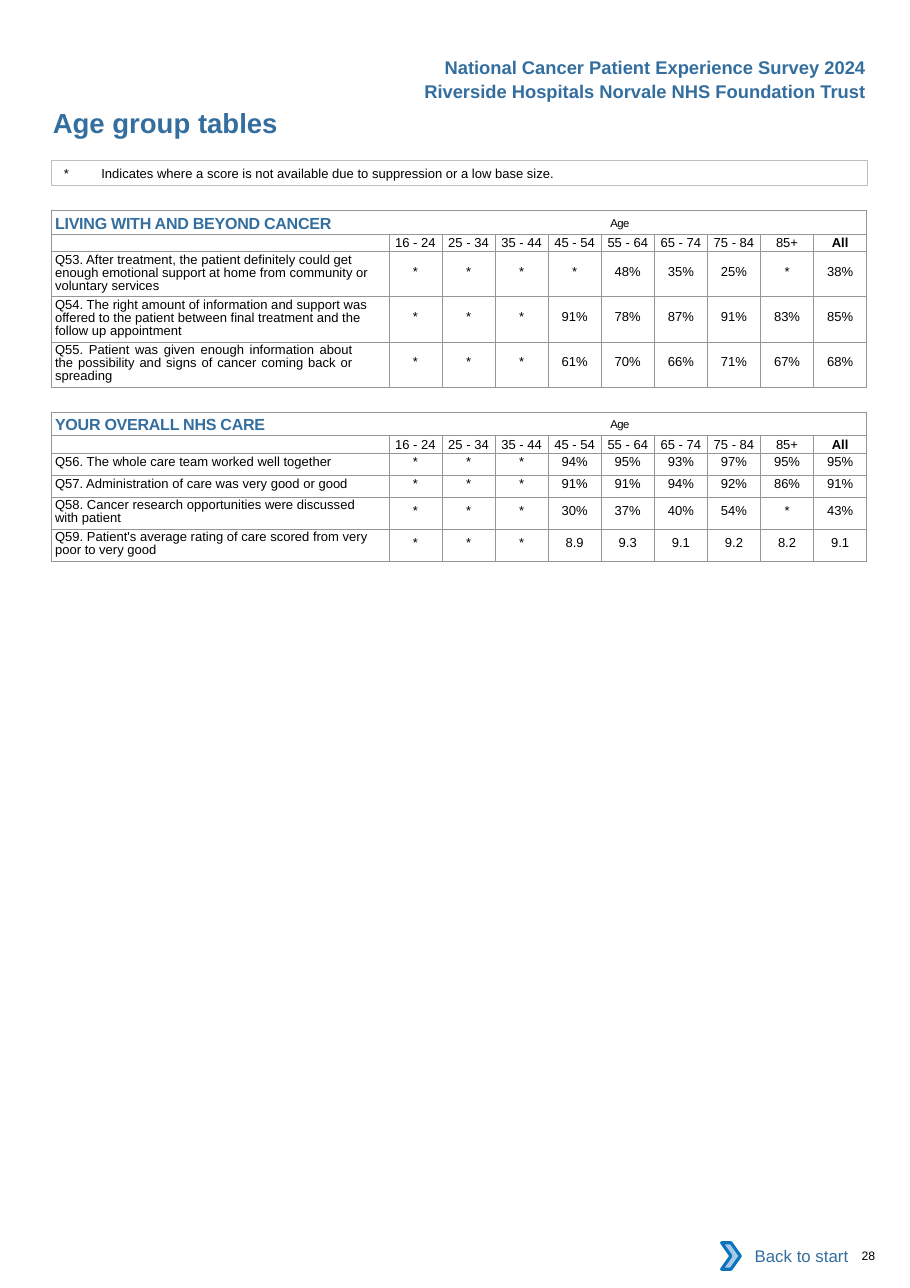
from lxml.etree import SubElement
from pptx import Presentation
from pptx.dml.color import RGBColor
from pptx.enum.shapes import MSO_SHAPE
from pptx.enum.text import MSO_ANCHOR, PP_ALIGN
from pptx.oxml.ns import qn
from pptx.util import Inches, Pt

# Content
HEADS = [("Riverside Hospitals Norvale NHS Foundation Trust", 3.73, 0.68, 4.23),
         ("National Cancer Patient Experience Survey 2024", 3.92, 0.46, 4.04)]
TITLE = "Age group tables"
NOTE = "*\tIndicates where a score is not available due to suppression or a low base size."
BACK = "Back to start"
PAGE = "28"
AGES = ["16 - 24", "25 - 34", "35 - 44", "45 - 54", "55 - 64",
        "65 - 74", "75 - 84", "85+", "All"]
# Each question: text, scores, count of text lines
TABLES = [
    ("LIVING WITH AND BEYOND CANCER", 1.91, [
        ("Q53. After treatment, the patient definitely could get enough emotional "
         "support at home from community or voluntary services",
         "* * * * 48% 35% 25% * 38%", 3),
        ("Q54. The right amount of information and support was offered to the "
         "patient between final treatment and the follow up appointment",
         "* * * 91% 78% 87% 91% 83% 85%", 3),
        ("Q55. Patient was given enough information about the possibility and "
         "signs of cancer coming back or spreading",
         "* * * 61% 70% 66% 71% 67% 68%", 3)]),
    ("YOUR OVERALL NHS CARE", 3.74, [
        ("Q56. The whole care team worked well together",
         "* * * 94% 95% 93% 97% 95% 95%", 1),
        ("Q57. Administration of care was very good or good",
         "* * * 91% 91% 94% 92% 86% 91%", 1),
        ("Q58. Cancer research opportunities were discussed with patient",
         "* * * 30% 37% 40% 54% * 43%", 2),
        ("Q59. Patient's average rating of care scored from very poor to very good",
         "* * * 8.9 9.3 9.1 9.2 8.2 9.1", 2)])]
JUSTIFIED = "Q55"

# Theme
THEME = {"font": "Arial", "blue": "336E9F", "black": "000000", "white": "FFFFFF",
         "grid": "939598", "frame": "BFBFBF", "sky": "A8C7E9", "edge": "0A74BB",
         "title": 18, "head": 12, "link": 11, "section": 10.5, "age": 12.8,
         "body": 8.5, "page": 8}
LEFT, WIDTH, ASK = 0.47, 7.4, 3.06
TOP_ROWS = [0.21, 0.16]
ROW = {1: 0.2, 2: 0.29, 3: 0.41}    # row height by text lines
PAD = {1: 0.01, 2: 0.06, 3: 0.12}   # space above a score by text lines
RIGHT, CENTER = PP_ALIGN.RIGHT, PP_ALIGN.CENTER


def color(name):
    return RGBColor.from_string(THEME[name])


def apply(item, form):
    for key, val in form.items():
        setattr(item, key, val)


def margins(item, left=0, top=0, right=0, bottom=0):
    apply(item, {"margin_left": Inches(left), "margin_top": Inches(top),
                 "margin_right": Inches(right), "margin_bottom": Inches(bottom)})


def add_run(para, text, size, tone="black", bold=False, track=0):
    run = para.add_run()
    run.text = text
    apply(run.font, {"name": THEME["font"], "size": Pt(THEME[size]), "bold": bold})
    run.font.color.rgb = color(tone)
    if track:
        run.font._element.set("spc", str(track))
    return run


def indent(para, left, tab=None):
    props = para._p.get_or_add_pPr()
    props.set("marL", str(Inches(left)))
    if tab:
        stops = SubElement(props, qn("a:tabLst"))
        SubElement(stops, qn("a:tab"), pos=str(Inches(tab)), algn="l")


def add_text(slide, box, text, size, tone, bold=False, wrap=True, align=None):
    frame = slide.shapes.add_textbox(*map(Inches, box)).text_frame
    frame.word_wrap = wrap
    para = frame.paragraphs[0]
    para.alignment = align
    add_run(para, text, size, tone, bold)
    return frame


def add_box(shapes, kind, box, fill=None, line=None, weight=0.5):
    shape = shapes.add_shape(kind, *map(Inches, box))
    shape.shadow.inherit = False
    if fill:
        shape.fill.solid()
        shape.fill.fore_color.rgb = color(fill)
    else:
        shape.fill.background()
    if line:
        shape.line.color.rgb = color(line)
        shape.line.width = Pt(weight)
    else:
        shape.line.fill.background()
    return shape


def edge_cell(cell):
    props = cell._tc.get_or_add_tcPr()
    for side in ("lnL", "lnR", "lnT", "lnB"):
        line = SubElement(props, qn("a:" + side), w=str(Pt(0.5)))
        fill = SubElement(line, qn("a:solidFill"))
        SubElement(fill, qn("a:srgbClr"), val=THEME["grid"])
    cell.fill.background()
    margins(cell)


def fill_cell(cell, text, align, form, bold=False):
    para = cell.text_frame.paragraphs[0]
    apply(para, {"alignment": align, **form})
    add_run(para, text, "body", bold=bold)
    return para


def add_scores(slide, name, top, asks):
    rows = TOP_ROWS + [ROW[ask[2]] for ask in asks]
    box = map(Inches, (LEFT, top, WIDTH, sum(rows)))
    table = slide.shapes.add_table(len(rows), len(AGES) + 1, *box).table
    apply(table, {"first_row": False, "horz_banding": False})
    for row, high in zip(table.rows, rows):
        row.height = Inches(high)
    for col, part in enumerate(table.columns):
        part.width = Inches((WIDTH - ASK) / len(AGES) if col else ASK)
    for cell in table.iter_cells():
        edge_cell(cell)

    # Section name and age bands
    first = table.cell(0, 0)
    first.merge(table.cell(0, len(AGES)))
    first.vertical_anchor = MSO_ANCHOR.MIDDLE
    para = first.text_frame.paragraphs[0]
    indent(para, 0.03, 5.04)
    add_run(para, name + "\t", "section", "blue", True, -15)
    run = add_run(para, "Age", "age", track=-40)
    run.font._element.set("baseline", "10000")
    for col, age in enumerate(AGES, 1):
        cell = table.cell(1, col)
        cell.vertical_anchor = MSO_ANCHOR.MIDDLE
        fill_cell(cell, age, CENTER, {"line_spacing": Pt(9.9)}, age == "All")

    # Questions and scores
    for row, (ask, scores, lines) in enumerate(asks, len(TOP_ROWS)):
        cell = table.cell(row, 0)
        just = ask.startswith(JUSTIFIED)
        gap = 0.02 if lines > 1 else 0.01
        margins(cell, top=gap, right=0.33 if just else 0.15)
        form = {"space_before": Inches(gap)}
        if lines > 1:
            form["line_spacing"] = Pt(8.6)
        align = PP_ALIGN.JUSTIFY if just else PP_ALIGN.LEFT
        indent(fill_cell(cell, ask, align, form), 0.03)
        for col, score in enumerate(scores.split(), 1):
            cell = table.cell(row, col)
            margins(cell, top=PAD[lines])
            fill_cell(cell, score, CENTER, {"space_before": Inches(PAD[lines])})

    # Small type in blank cells keeps the rows low
    for cell in table.iter_cells():
        para = cell.text_frame.paragraphs[0]
        if not para.runs:
            SubElement(para._p, qn("a:endParaRPr"), sz=str(int(THEME["body"] * 100)))


def main():
    deck = Presentation()
    apply(deck, {"slide_width": Inches(8.26), "slide_height": Inches(11.69)})
    slide = deck.slides.add_slide(deck.slide_layouts[6])

    # Page number and title
    frame = add_text(slide, (7.72, 11.33, 0.51, 0.13), PAGE, "page", "black")
    margins(frame)
    indent(frame.paragraphs[0], 0.1)
    frame = add_text(slide, (LEFT, 0.96, 4.13, 0.3), TITLE, "title", "blue", True)
    margins(frame)
    indent(frame.paragraphs[0], 0.01)
    frame.paragraphs[0].space_before = Pt(1)

    # Tables
    for name, top, asks in TABLES:
        add_scores(slide, name, top, asks)

    # Note on suppressed scores
    note = add_box(slide.shapes, MSO_SHAPE.RECTANGLE, (LEFT, 1.46, WIDTH, 0.22),
                   line="frame").text_frame
    margins(note, top=0.04, bottom=0.04)
    apply(note, {"word_wrap": True, "vertical_anchor": MSO_ANCHOR.TOP})
    para = note.paragraphs[0]
    para.alignment = PP_ALIGN.LEFT
    indent(para, 0.11, 0.34)
    add_run(para, NOTE, "body")

    # Survey and trust names
    for text, left, top, wide in HEADS:
        add_text(slide, (left, top, wide, 0.3), text, "head", "blue", True, False, RIGHT)

    # Link back to the start
    link = slide.shapes.add_group_shape().shapes
    back = add_box(link, MSO_SHAPE.RECTANGLE, (6.62, 11.19, 1.18, 0.42), "white")
    back.text_frame.vertical_anchor = MSO_ANCHOR.MIDDLE
    para = back.text_frame.paragraphs[0]
    para.alignment = RIGHT
    add_run(para, BACK, "link", "blue")
    add_box(link, MSO_SHAPE.CHEVRON, (6.55, 11.28, 0.17, 0.24), "sky", "edge", 2)

    deck.save("out.pptx")


if __name__ == "__main__":
    main()
